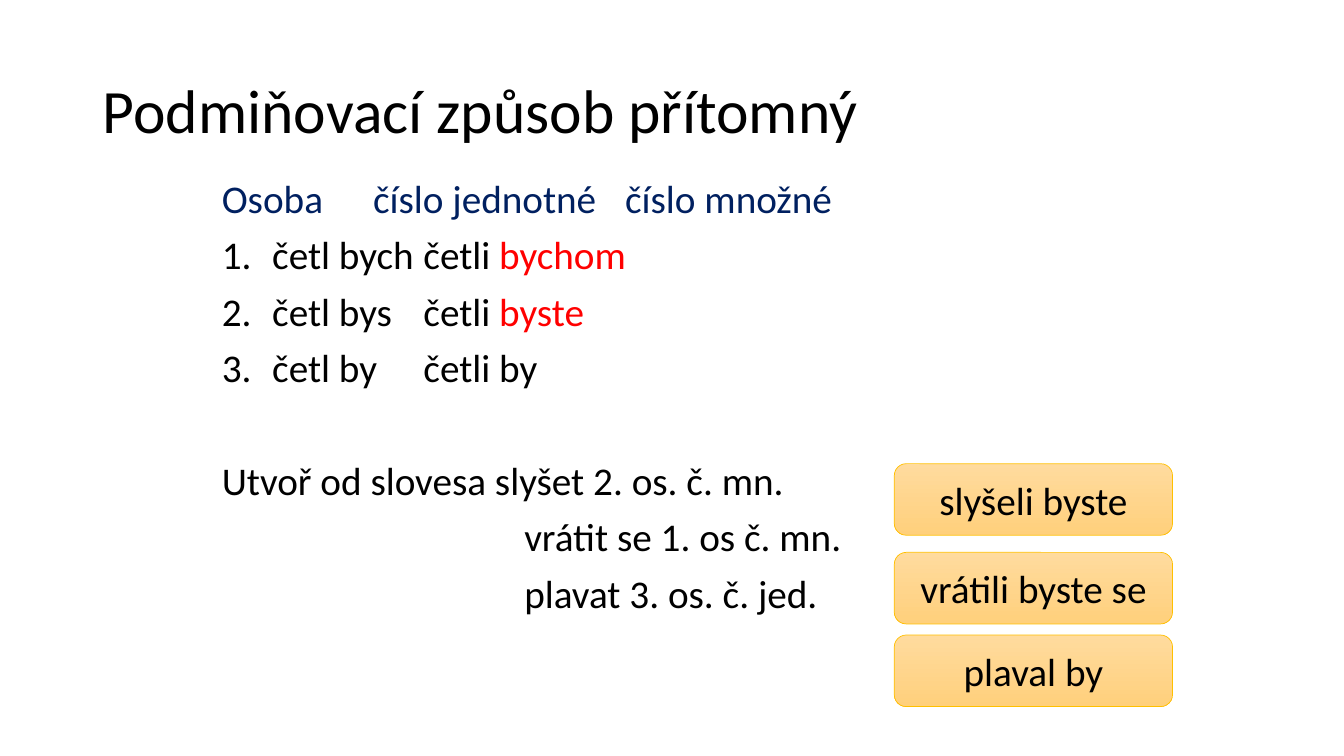
from dataclasses import dataclass

from lxml import etree
from pptx import Presentation
from pptx import util as u
from pptx.dml.color import RGBColor
from pptx.enum import shapes, text
from pptx.oxml import ns


@dataclass(frozen=True)
class Theme:
    font: str = "Calibri"
    title: int = 44
    body: int = 28
    ink: str = "000000"
    head: str = "002060"
    mark: str = "FF0000"
    edge: str = "FFC000"
    glow: tuple = ("FFDB9E", "FFD07C")


T = Theme()

# Each row: space before in points, left indent in inches, runs of (text, colour)
ROWS = [
    (10, 0, [("Osoba\tčíslo jednotné\tčíslo množné", T.head)]),
    (10, 0, [("1.\tčetl bych\tčetli ", T.ink), ("bychom", T.mark)]),
    (10, 0, [("2.\tčetl bys\tčetli ", T.ink), ("byste", T.mark)]),
    (10, 0, [("3.\tčetl by\tčetli by", T.ink)]),
    (50.5, 0, [("Utvoř od slovesa slyšet 2. os. č. mn.", T.ink)]),
    (10, 3, [("vrátit se 1. os č. mn.", T.ink)]),
    (10, 3, [("plavat 3. os. č. jed.", T.ink)]),
]
TABS = (2, 6)
KEYS = [(4.6, "slyšeli byste"), (5.48, "vrátili byste se"), (6.3, "plaval by")]


def apply(obj, **vals):
    for name, val in vals.items():
        setattr(obj, name, val)


def place(shape, box):
    names = ("left", "top", "width", "height")
    apply(shape, **{n: u.Inches(v) for n, v in zip(names, box)})


def write(para, words, size, color):
    run = para.add_run()
    run.text = words
    apply(run.font, name=T.font, size=u.Pt(size))
    run.font.color.rgb = RGBColor.from_string(color)


def align(para, left):
    """Drop the bullet, set the indent and the column tab stops."""
    props = para._p.get_or_add_pPr()
    props.set("marL", str(u.Inches(left)))
    props.set("indent", "0")
    etree.SubElement(props, ns.qn("a:buNone"))
    stops = etree.SubElement(props, ns.qn("a:tabLst"))
    for pos in TABS:
        etree.SubElement(stops, ns.qn("a:tab"), pos=str(u.Inches(pos)), algn="l")


# Title
def title(slide, box):
    shape = slide.shapes.title
    place(shape, box)
    frame = shape.text_frame
    apply(frame, vertical_anchor=text.MSO_ANCHOR.MIDDLE,
          auto_size=text.MSO_AUTO_SIZE.NONE)
    para = frame.paragraphs[0]
    apply(para, alignment=text.PP_ALIGN.LEFT, line_spacing=0.9)
    write(para, "Podmiňovací způsob přítomný", T.title, T.ink)


# Conjugation and exercise
def body(slide, box):
    shape = slide.placeholders[1]
    place(shape, box)
    frame = shape.text_frame
    apply(frame, vertical_anchor=text.MSO_ANCHOR.TOP,
          auto_size=text.MSO_AUTO_SIZE.NONE)
    for i, (gap, left, runs) in enumerate(ROWS):
        para = frame.add_paragraph() if i else frame.paragraphs[0]
        apply(para, line_spacing=0.9, space_before=u.Pt(gap))
        align(para, left)
        for words, color in runs:
            write(para, words, T.body, color)


# Answer card
def card(slide, box, words):
    shape = slide.shapes.add_shape(
        shapes.MSO_SHAPE.ROUNDED_RECTANGLE, *map(u.Inches, box))
    shape.shadow.inherit = False
    shape.fill.gradient()
    shape.fill.gradient_angle = 270
    for stop, color in zip(shape.fill.gradient_stops, T.glow):
        stop.color.rgb = RGBColor.from_string(color)
    shape.line.color.rgb = RGBColor.from_string(T.edge)
    shape.line.width = u.Pt(0.5)
    frame = shape.text_frame
    apply(frame, vertical_anchor=text.MSO_ANCHOR.MIDDLE, word_wrap=True)
    para = frame.paragraphs[0]
    para.alignment = text.PP_ALIGN.CENTER
    write(para, words, T.body, T.ink)


def main():
    deck = Presentation()
    apply(deck, slide_width=u.Inches(13.33), slide_height=u.Inches(7.5))
    slide = deck.slides.add_slide(deck.slide_layouts[1])
    title(slide, (0.92, 0.4, 11.5, 1.45))
    body(slide, (2.1, 1.73, 9, 5.35))
    for top, words in KEYS:
        card(slide, (8.87, top, 2.76, 0.71), words)
    deck.save("out.pptx")


if __name__ == "__main__":
    main()
